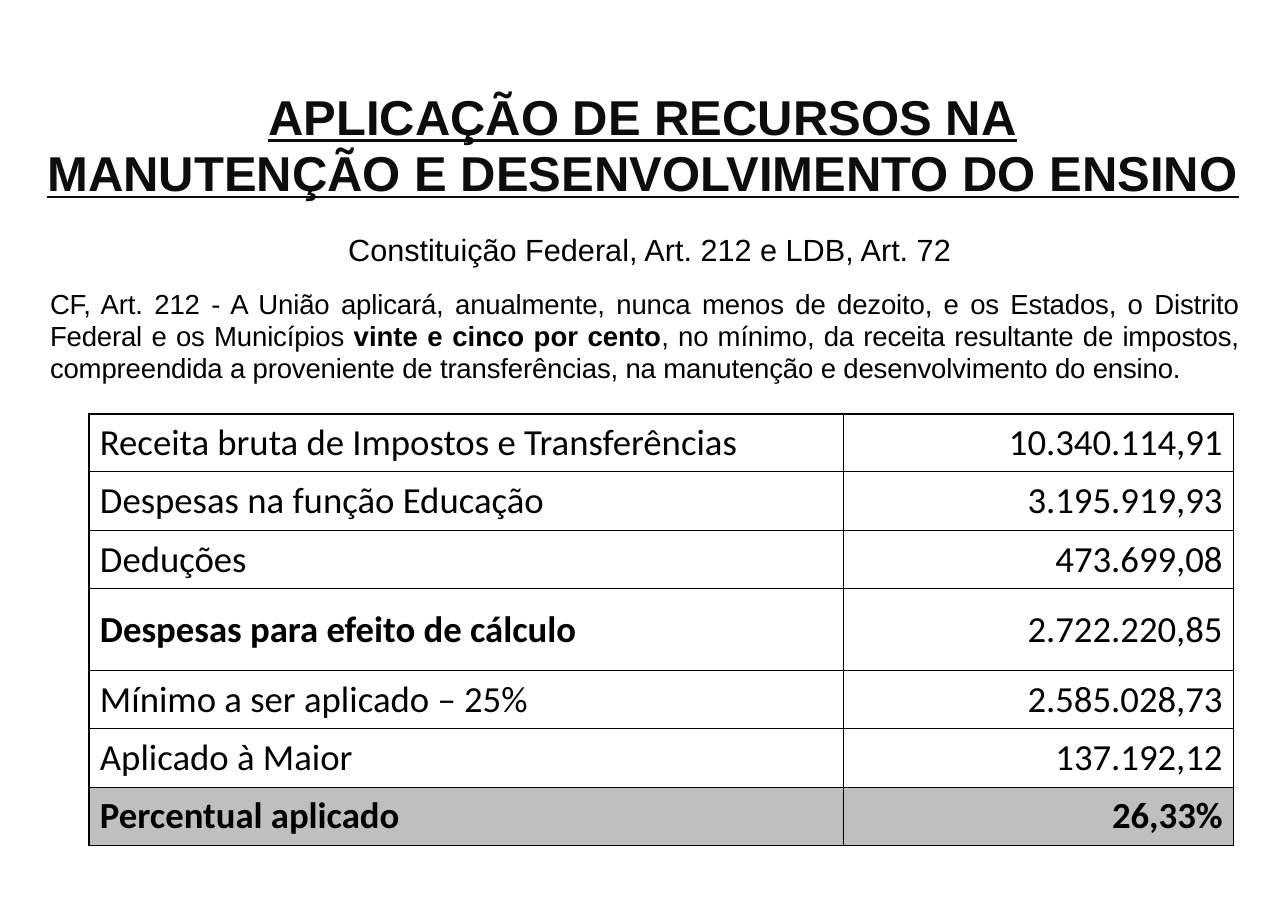
import pptx
import pptx.dml.color
import pptx.enum.text
import pptx.oxml
import pptx.oxml.ns
import pptx.util

PX = 8298
ALIGN = pptx.enum.text.PP_ALIGN
ANCHOR = pptx.enum.text.MSO_ANCHOR
INK = "000000"
ROWS = [
    ("Receita bruta de Impostos e Transferências", "10.340.114,91"),
    ("Despesas na função Educação", "3.195.919,93"),
    ("Deduções", "473.699,08"),
    ("Despesas para efeito de cálculo", "2.722.220,85"),
    ("Mínimo a ser aplicado – 25%", "2.585.028,73"),
    ("Aplicado à Maior", "137.192,12"),
    ("Percentual aplicado", "26,33%"),
]
ROW_HEIGHTS = (58, 59, 58, 82, 58, 59, 58)
COLUMN_WIDTHS = (755, 390)
BOLD_CELLS = {(3, 0), (6, 0), (6, 1)}


def px(length):
    """Turn pixels into EMU."""
    return pptx.util.Emu(length * PX)


def color(value):
    """Turn a hex string into a colour."""
    return pptx.dml.color.RGBColor.from_string(value)


def write(paragraph, text, size=18, font="Arial", ink=INK, bold=False,
          underline=False, tracking=0):
    """Add a formatted run of text to a paragraph."""
    run = paragraph.add_run()
    run.text = text
    run.font.size = pptx.util.Pt(size)
    run.font.name = font
    run.font.bold = bold
    run.font.underline = underline
    run.font.color.rgb = color(ink)
    if tracking:
        run.font._element.set("spc", str(round(tracking * 100)))


def place(holder, left, top, width, height, inset):
    """Move a placeholder and return its top-anchored text frame."""
    holder.left, holder.top = px(left), px(top)
    holder.width, holder.height = px(width), px(height)
    frame = holder.text_frame
    frame.margin_left = frame.margin_right = frame.margin_bottom = 0
    frame.margin_top = px(inset)
    frame.vertical_anchor = ANCHOR.TOP
    frame.auto_size = pptx.enum.text.MSO_AUTO_SIZE.NONE
    frame.word_wrap = True
    return frame


def lay_out(paragraph, align, before, spacing, right=0):
    """Set alignment, spacing and margins of an unbulleted paragraph."""
    paragraph.alignment = align
    paragraph.space_before = pptx.util.Pt(before)
    paragraph.line_spacing = spacing
    properties = paragraph._p.get_or_add_pPr()
    properties.set("marL", "0")
    properties.set("marR", str(px(right)))
    properties.set("indent", "0")
    properties.append(pptx.oxml.parse_xml(
        f'<a:buNone {pptx.oxml.ns.nsdecls("a")}/>'))


def add_heading(slide):
    """Fill the title placeholder."""
    frame = place(slide.shapes.title, 23, 83, 1240, 120, 6)
    heading = frame.paragraphs[0]
    lay_out(heading, ALIGN.CENTER, 3.6, pptx.util.Pt(36.7))
    style = dict(size=32, ink="0D0D0D", bold=True, underline=True)
    write(heading, "APLICAÇÃO DE RECURSOS NA", **style)
    heading.add_line_break()
    write(heading, "MANUTENÇÃO E DESENVOLVIMENTO DO ENSINO", **style)


def add_legal_basis(slide):
    """Fill the body placeholder with the legal reference and article."""
    frame = place(slide.placeholders[1], 50, 230, 1200, 157, 1)
    reference = frame.paragraphs[0]
    lay_out(reference, ALIGN.CENTER, 1.1, 1.0)
    write(reference, "Constituição Federal, Art. 212 e LDB, Art. 72", size=20)
    article = frame.add_paragraph()
    lay_out(article, ALIGN.JUSTIFY, 14.1, 0.96, right=11)
    write(article, "CF, Art. 212 - A União aplicará, anualmente, nunca menos de "
          "dezoito, e os Estados, o Distrito Federal e os Municípios ",
          tracking=-0.1)
    write(article, "vinte e cinco por cento", bold=True)
    write(article, ", no mínimo, da receita resultante de impostos, "
          "compreendida a proveniente de transferências, na manutenção e "
          "desenvolvimento do ensino.", tracking=-0.1)


def add_borders(cell):
    """Draw a thin line on the four sides of a cell."""
    for side in "LRTB":
        cell._tc.get_or_add_tcPr().append(pptx.oxml.parse_xml(
            f'<a:ln{side} {pptx.oxml.ns.nsdecls("a")} w="12700"><a:solidFill>'
            f'<a:srgbClr val="{INK}"/></a:solidFill></a:ln{side}>'))


def add_spending_table(slide):
    """Add the table of revenue and education spending."""
    table = slide.shapes.add_table(
        len(ROWS), len(COLUMN_WIDTHS), px(89), px(414),
        px(sum(COLUMN_WIDTHS)), px(sum(ROW_HEIGHTS))).table
    table.first_row = table.horz_banding = False
    for column, width in zip(table.columns, COLUMN_WIDTHS):
        column.width = px(width)
    for row, height in zip(table.rows, ROW_HEIGHTS):
        row.height = px(height)
    for r, entry in enumerate(ROWS):
        for c, text in enumerate(entry):
            cell = table.cell(r, c)
            cell.vertical_anchor = ANCHOR.MIDDLE
            add_borders(cell)
            cell.fill.solid()
            is_total = r == len(ROWS) - 1
            cell.fill.fore_color.rgb = color("BFBFBF" if is_total else "FFFFFF")
            paragraph = cell.text_frame.paragraphs[0]
            paragraph.alignment = ALIGN.RIGHT if c else ALIGN.LEFT
            write(paragraph, text, size=24, font="Calibri",
                  bold=(r, c) in BOLD_CELLS)


def main():
    """Build and save the slide."""
    deck = pptx.Presentation()
    deck.slide_width = pptx.util.Inches(11.69)
    deck.slide_height = pptx.util.Inches(8.27)
    slide = deck.slides.add_slide(deck.slide_layouts[1])
    add_heading(slide)
    add_legal_basis(slide)
    add_spending_table(slide)
    deck.save("out.pptx")


if __name__ == "__main__":
    main()
